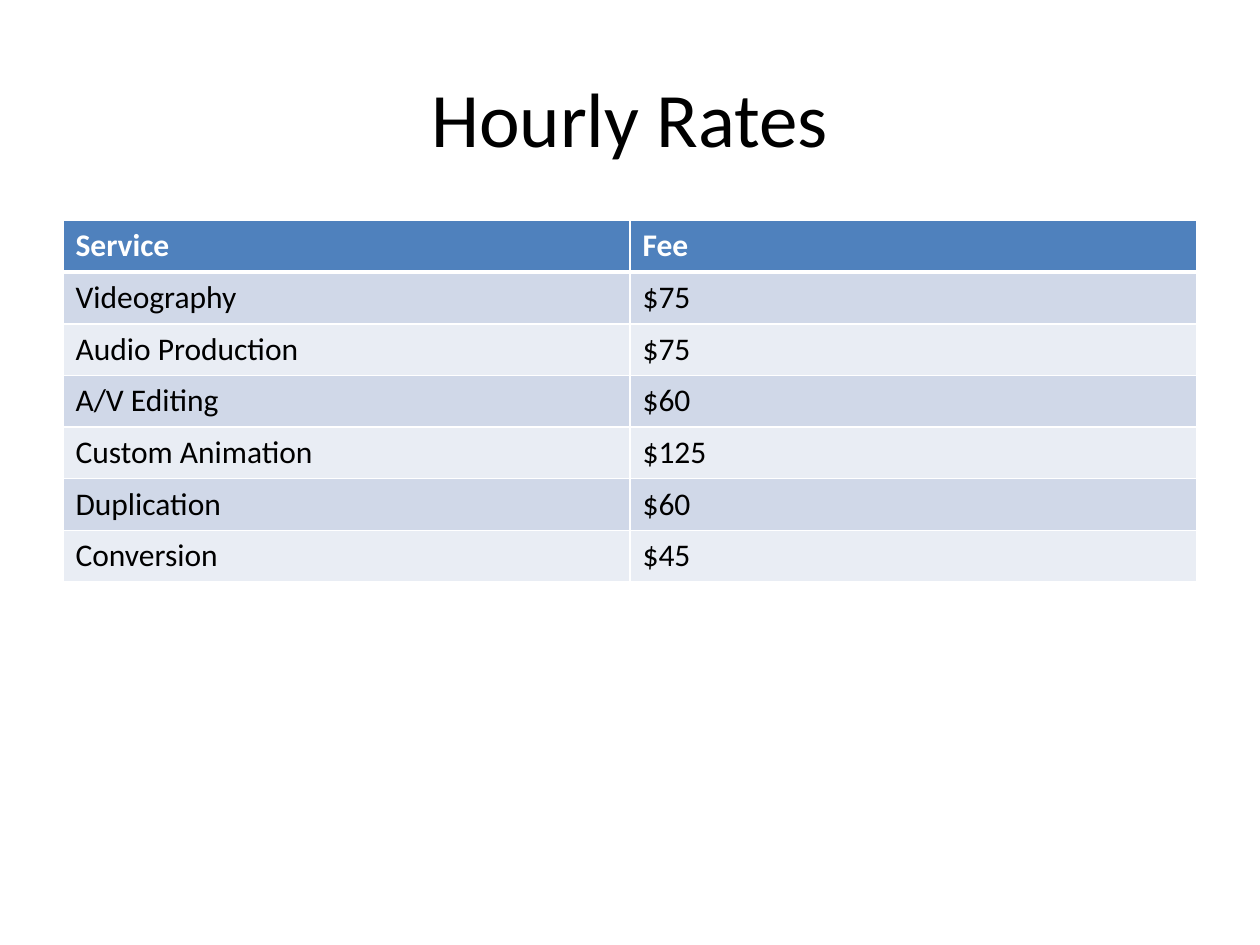
import pptx
import pptx.dml.color
import pptx.enum.text
import pptx.oxml.ns
import pptx.util
import lxml.etree

TITLE = "Hourly Rates"
RATES = [
    ("Service", "Fee"),
    ("Videography", "$75"),
    ("Audio Production", "$75"),
    ("A/V Editing", "$60"),
    ("Custom Animation", "$125"),
    ("Duplication", "$60"),
    ("Conversion", "$45"),
]
THEME = {
    "font": "Calibri",
    "title": 44,
    "body": 18,
    "ink": "000000",
    "white": "FFFFFF",
    "head": "4F81BD",
    "bands": ("E9EDF4", "D0D8E8"),
    "thin": 1,
    "thick": 3,
}
LEFT, WIDTH = 0.5, 9
TOP, ROW = 1.75, 0.41

Inches = pptx.util.Inches
Pt = pptx.util.Pt


def color(name):
    return pptx.dml.color.RGBColor.from_string(name)


def write(frame, text, size, ink, bold=False):
    para = frame.paragraphs[0]
    run = para.add_run()
    run.text = text
    run.font.name = THEME["font"]
    run.font.size = Pt(size)
    run.font.bold = bold
    run.font.color.rgb = color(ink)
    return para


def border(cell, side, width):
    qn = pptx.oxml.ns.qn
    props = cell._tc.get_or_add_tcPr()
    line = lxml.etree.SubElement(props, qn("a:ln" + side), w=str(Pt(width)))
    fill = lxml.etree.SubElement(line, qn("a:solidFill"))
    lxml.etree.SubElement(fill, qn("a:srgbClr"), val=THEME["white"])


def add_title(slide):
    box = slide.shapes.add_textbox(
        Inches(LEFT), Inches(0.3), Inches(WIDTH), Inches(1.25))
    frame = box.text_frame
    frame.word_wrap = True
    frame.vertical_anchor = pptx.enum.text.MSO_ANCHOR.MIDDLE
    para = write(frame, TITLE, THEME["title"], THEME["ink"])
    para.alignment = pptx.enum.text.PP_ALIGN.CENTER


def add_rates(slide):
    count, cols = len(RATES), len(RATES[0])
    table = slide.shapes.add_table(
        count, cols, Inches(LEFT), Inches(TOP),
        Inches(WIDTH), Inches(ROW * count)).table
    for i, rate in enumerate(RATES):
        table.rows[i].height = Inches(ROW)
        head = i == 0
        back = THEME["head"] if head else THEME["bands"][i % 2]
        ink = THEME["white"] if head else THEME["ink"]
        thick = {0: "B", 1: "T"}.get(i)
        for j, text in enumerate(rate):
            cell = table.cell(i, j)
            for side in "LRTB":
                border(cell, side, THEME["thick" if side == thick else "thin"])
            cell.fill.solid()
            cell.fill.fore_color.rgb = color(back)
            write(cell.text_frame, text, THEME["body"], ink, head)


def main():
    deck = pptx.Presentation()
    deck.slide_width, deck.slide_height = Inches(10), Inches(7.5)
    slide = deck.slides.add_slide(deck.slide_layouts[6])
    add_title(slide)
    add_rates(slide)
    deck.save("out.pptx")


if __name__ == "__main__":
    main()
